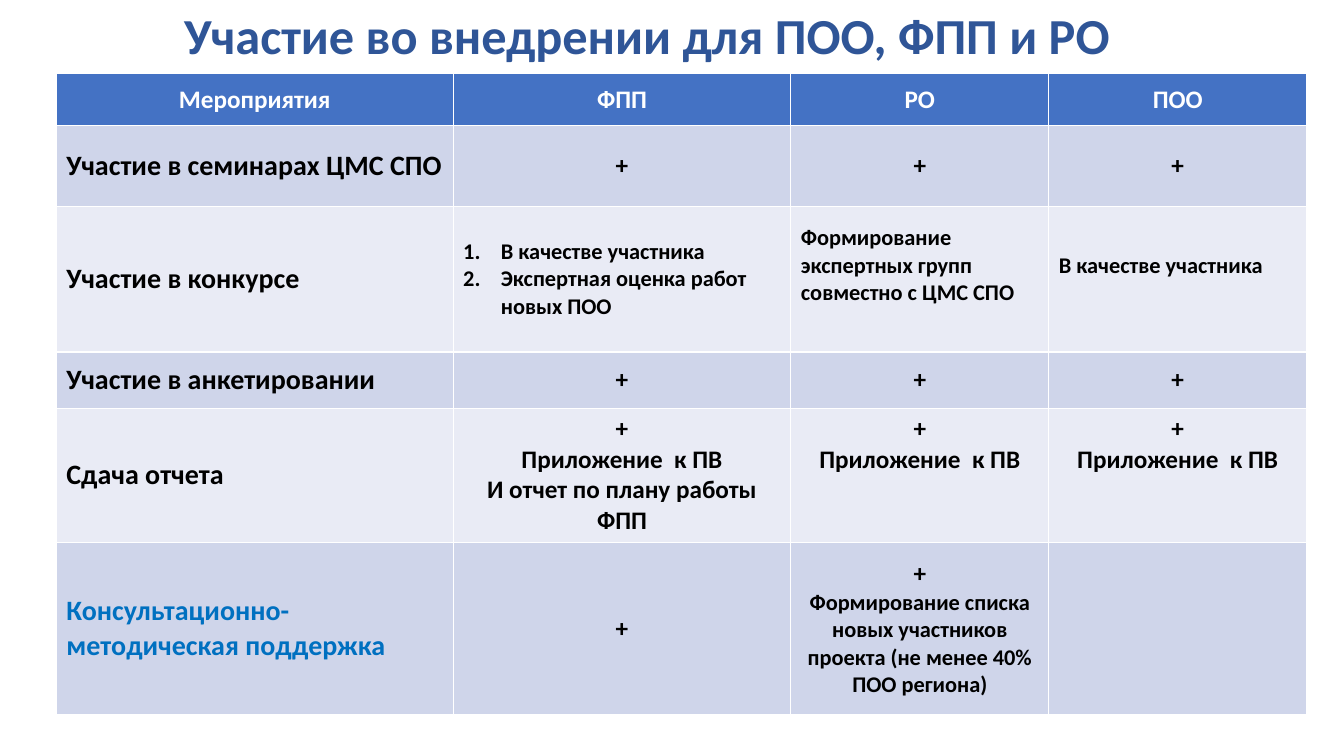
from lxml.etree import SubElement
from pptx import Presentation
from pptx.dml.color import RGBColor
from pptx.enum.text import MSO_ANCHOR, MSO_AUTO_SIZE, PP_ALIGN
from pptx.oxml.ns import qn
from pptx.util import Cm, Pt

TITLE = "Участие во внедрении для ПОО, ФПП и РО"
HEADS = ["Мероприятия", "ФПП", "РО", "ПОО"]
PLUS = [("+", 18)]
REPORT = PLUS + [("Приложение  к ПВ", 18)]
ROWS = [
    ("Участие в семинарах ЦМС СПО", PLUS, PLUS, PLUS),
    (
        "Участие в конкурсе",
        [("В качестве участника", 16), ("Экспертная оценка работ новых ПОО", 16)],
        [("Формирование экспертных групп совместно с ЦМС СПО", 16)],
        [("В качестве участника", 16)],
    ),
    ("Участие в анкетировании", PLUS, PLUS, PLUS),
    ("Сдача отчета", REPORT + [("И отчет по плану работы ФПП", 18)], REPORT, REPORT),
    (
        "Консультационно-методическая поддержка",
        PLUS,
        PLUS + [("Формирование списка новых участников проекта (не менее 40% ПОО региона)", 16)],
        [],
    ),
]
CONTEST, REPORTS, SUPPORT = 2, 4, 5
WIDTHS = [10, 8.51, 6.5, 6.5]
HEIGHTS = [1.32, 2.03, 3.67, 1.42, 3.38, 4.34]
COLORS = {
    "title": "2F5597",
    "head": "4472C4",
    "odd": "CFD5EA",
    "even": "E9EBF5",
    "white": "FFFFFF",
    "black": "000000",
    "accent": "0070C0",
}


def write(frame, lines, color="black", align=PP_ALIGN.CENTER, spacing=None, numbered=False):
    for i, (text, size) in enumerate(lines):
        para = frame.add_paragraph() if i else frame.paragraphs[0]
        para.alignment = align
        if spacing:
            para.line_spacing = spacing
        if numbered:
            props = para._p.get_or_add_pPr()
            props.set("marL", str(Cm(0.95)))
            props.set("indent", str(-Cm(0.95)))
            SubElement(props, qn("a:buFont"), typeface="+mj-lt")
            SubElement(props, qn("a:buAutoNum"), type="arabicPeriod")
        run = para.add_run()
        run.text = text
        run.font.name = "Calibri"
        run.font.size = Pt(size)
        run.font.bold = True
        run.font.color.rgb = RGBColor.from_string(COLORS[color])


def paint(cell, color, anchor=MSO_ANCHOR.MIDDLE):
    cell.fill.solid()
    cell.fill.fore_color.rgb = RGBColor.from_string(COLORS[color])
    cell.vertical_anchor = anchor


def main():
    deck = Presentation()
    deck.slide_width, deck.slide_height = Cm(33.87), Cm(19.05)
    slide = deck.slides.add_slide(deck.slide_layouts[5])

    title = slide.shapes.title
    title.left, title.top, title.width, title.height = Cm(2.34), Cm(0.28), Cm(27.94), Cm(1.37)
    title.text_frame.auto_size = MSO_AUTO_SIZE.NONE
    title.text_frame.vertical_anchor = MSO_ANCHOR.MIDDLE
    write(title.text_frame, [(TITLE, 36)], color="title", spacing=0.9)

    table = slide.shapes.add_table(
        len(HEIGHTS), len(WIDTHS), Cm(1.42), Cm(1.85), Cm(sum(WIDTHS)), Cm(sum(HEIGHTS))
    ).table
    for column, width in zip(table.columns, WIDTHS):
        column.width = Cm(width)
    for row, height in zip(table.rows, HEIGHTS):
        row.height = Cm(height)

    for c, head in enumerate(HEADS):
        cell = table.cell(0, c)
        paint(cell, "head")
        write(cell.text_frame, [(head, 18)], color="white")

    for r, (name, *marks) in enumerate(ROWS, 1):
        band = "odd" if r % 2 else "even"
        cell = table.cell(r, 0)
        paint(cell, band)
        write(cell.text_frame, [(name, 20)], align=PP_ALIGN.LEFT,
              color="accent" if r == SUPPORT else "black")
        for c, lines in enumerate(marks, 1):
            cell = table.cell(r, c)
            paint(cell, band, MSO_ANCHOR.TOP if r == REPORTS else MSO_ANCHOR.MIDDLE)
            if r == CONTEST and c > 1:
                cell.margin_bottom = Cm(0.81)
            write(cell.text_frame, lines, numbered=r == CONTEST and c == 1,
                  align=PP_ALIGN.LEFT if r == CONTEST else PP_ALIGN.CENTER)

    deck.save("out.pptx")


if __name__ == "__main__":
    main()
